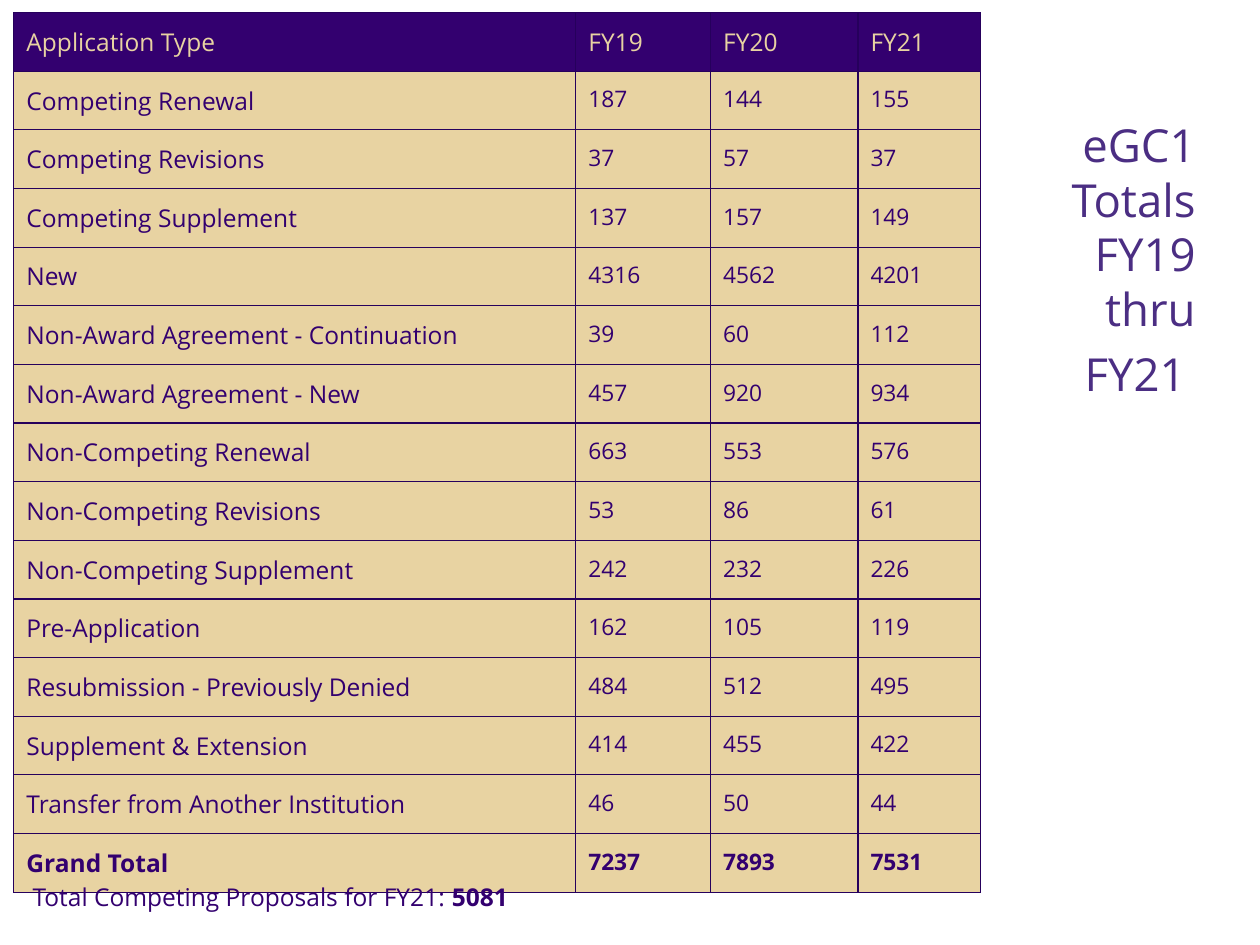
from dataclasses import dataclass

from lxml import etree
from pptx import Presentation
from pptx.dml.color import RGBColor
from pptx.enum.text import MSO_ANCHOR, MSO_AUTO_SIZE, PP_ALIGN
from pptx.oxml.ns import qn
from pptx.util import Inches, Pt

BOTTOM = MSO_ANCHOR.BOTTOM
TOP = MSO_ANCHOR.TOP
NO_AUTOFIT = MSO_AUTO_SIZE.NONE
FIT_SHAPE = MSO_AUTO_SIZE.SHAPE_TO_FIT_TEXT
LEFT = PP_ALIGN.LEFT
RIGHT = PP_ALIGN.RIGHT
TITLE_ONLY = 5


@dataclass(frozen=True)
class Theme:
    """Colours, font and type sizes of the slide."""
    font: str = "Open Sans"
    purple: str = "33006F"
    title_purple: str = "4B2E83"
    gold: str = "E8D3A2"
    border: str = "26005C"
    title_size: int = 26
    title_gap_size: int = 22
    label_size: int = 14
    count_size: int = 13
    border_width: float = 0.75
    inset: float = 0.1


THEME = Theme()
COLUMN_WIDTHS = (4.46, 1.07, 1.17, 0.97)
ROW_HEIGHT = 0.45
HEADINGS = ("Application Type", "FY19", "FY20", "FY21")
APPLICATIONS = (
    ("Competing Renewal", 187, 144, 155),
    ("Competing Revisions", 37, 57, 37),
    ("Competing Supplement", 137, 157, 149),
    ("New", 4316, 4562, 4201),
    ("Non-Award Agreement - Continuation", 39, 60, 112),
    ("Non-Award Agreement - New", 457, 920, 934),
    ("Non-Competing Renewal", 663, 553, 576),
    ("Non-Competing Revisions", 53, 86, 61),
    ("Non-Competing Supplement", 242, 232, 226),
    ("Pre-Application", 162, 105, 119),
    ("Resubmission - Previously Denied", 484, 512, 495),
    ("Supplement & Extension", 414, 455, 422),
    ("Transfer from Another Institution", 46, 50, 44),
    ("Grand Total", 7237, 7893, 7531),
)


def add_text(paragraph, text, *, size=THEME.label_size, color=THEME.purple,
             bold=False, align=LEFT):
    """Append one formatted run to a paragraph."""
    paragraph.alignment = align
    run = paragraph.add_run()
    run.text = text
    run.font.name = THEME.font
    run.font.size = Pt(size)
    run.font.bold = bold
    run.font.color.rgb = RGBColor.from_string(color)


def set_frame(frame, anchor, fit):
    """Give a text frame its insets, anchor, wrapping and fit."""
    frame.margin_left = frame.margin_right = Inches(THEME.inset)
    frame.margin_top = frame.margin_bottom = Inches(THEME.inset)
    frame.vertical_anchor = anchor
    frame.word_wrap = True
    frame.auto_size = fit


def set_borders(cell):
    """Draw the four borders of a table cell."""
    properties = cell._tc.get_or_add_tcPr()
    for position, side in enumerate(("lnL", "lnR", "lnT", "lnB")):
        line = etree.Element(qn(f"a:{side}"), w=str(Pt(THEME.border_width)))
        fill = etree.SubElement(line, qn("a:solidFill"))
        etree.SubElement(fill, qn("a:srgbClr"), val=THEME.border)
        properties.insert(position, line)


def fill_cell(cell, text, fill, **text_format):
    """Write and style one table cell."""
    cell.margin_left = cell.margin_right = Inches(THEME.inset)
    cell.margin_top = cell.margin_bottom = Inches(THEME.inset)
    cell.fill.solid()
    cell.fill.fore_color.rgb = RGBColor.from_string(fill)
    set_borders(cell)
    add_text(cell.text_frame.paragraphs[0], text, **text_format)


def add_title(slide):
    """Place the slide title to the right of the table."""
    title = slide.shapes.title
    title.left, title.top = Inches(7.82), Inches(1.55)
    title.width, title.height = Inches(1.77), Inches(1.73)
    frame = title.text_frame
    set_frame(frame, BOTTOM, NO_AUTOFIT)
    title_format = {"color": THEME.title_purple, "align": RIGHT}
    span = frame.paragraphs[0]
    add_text(span, "eGC1 Totals FY19 thru", size=THEME.title_size, **title_format)
    end_year = frame.add_paragraph()
    end_year.space_before = Pt(6)
    add_text(end_year, "FY21", size=THEME.title_size, **title_format)
    add_text(end_year, " ", size=THEME.title_gap_size, **title_format)
    for paragraph in frame.paragraphs:
        paragraph.line_spacing = 1.0


def add_totals_table(slide):
    """Build the table of application counts by fiscal year."""
    row_count = len(APPLICATIONS) + 1
    table = slide.shapes.add_table(
        row_count, len(HEADINGS), Inches(0.11), Inches(0.1),
        Inches(sum(COLUMN_WIDTHS)), Inches(ROW_HEIGHT * row_count)).table
    for column, width in zip(table.columns, COLUMN_WIDTHS):
        column.width = Inches(width)
    for row in table.rows:
        row.height = Inches(ROW_HEIGHT)
    for column, heading in enumerate(HEADINGS):
        fill_cell(table.cell(0, column), heading, THEME.purple, color=THEME.gold)
    for row, application in enumerate(APPLICATIONS, start=1):
        for column, value in enumerate(application):
            size = THEME.count_size if column else THEME.label_size
            fill_cell(table.cell(row, column), str(value), THEME.gold,
                      size=size, bold=row == len(APPLICATIONS))


def add_competing_total(slide):
    """Add the line below the table with the competing total."""
    note = slide.shapes.add_textbox(
        Inches(0.16), Inches(6.9), Inches(6.42), Inches(0.67))
    set_frame(note.text_frame, TOP, FIT_SHAPE)
    paragraph = note.text_frame.paragraphs[0]
    add_text(paragraph, "Total Competing Proposals for FY21: ")
    add_text(paragraph, "5081", bold=True)


def main():
    """Build and save the slide."""
    deck = Presentation()
    deck.slide_width, deck.slide_height = Inches(10), Inches(7.5)
    slide = deck.slides.add_slide(deck.slide_layouts[TITLE_ONLY])
    add_title(slide)
    add_totals_table(slide)
    add_competing_total(slide)
    deck.save("out.pptx")


if __name__ == "__main__":
    main()
